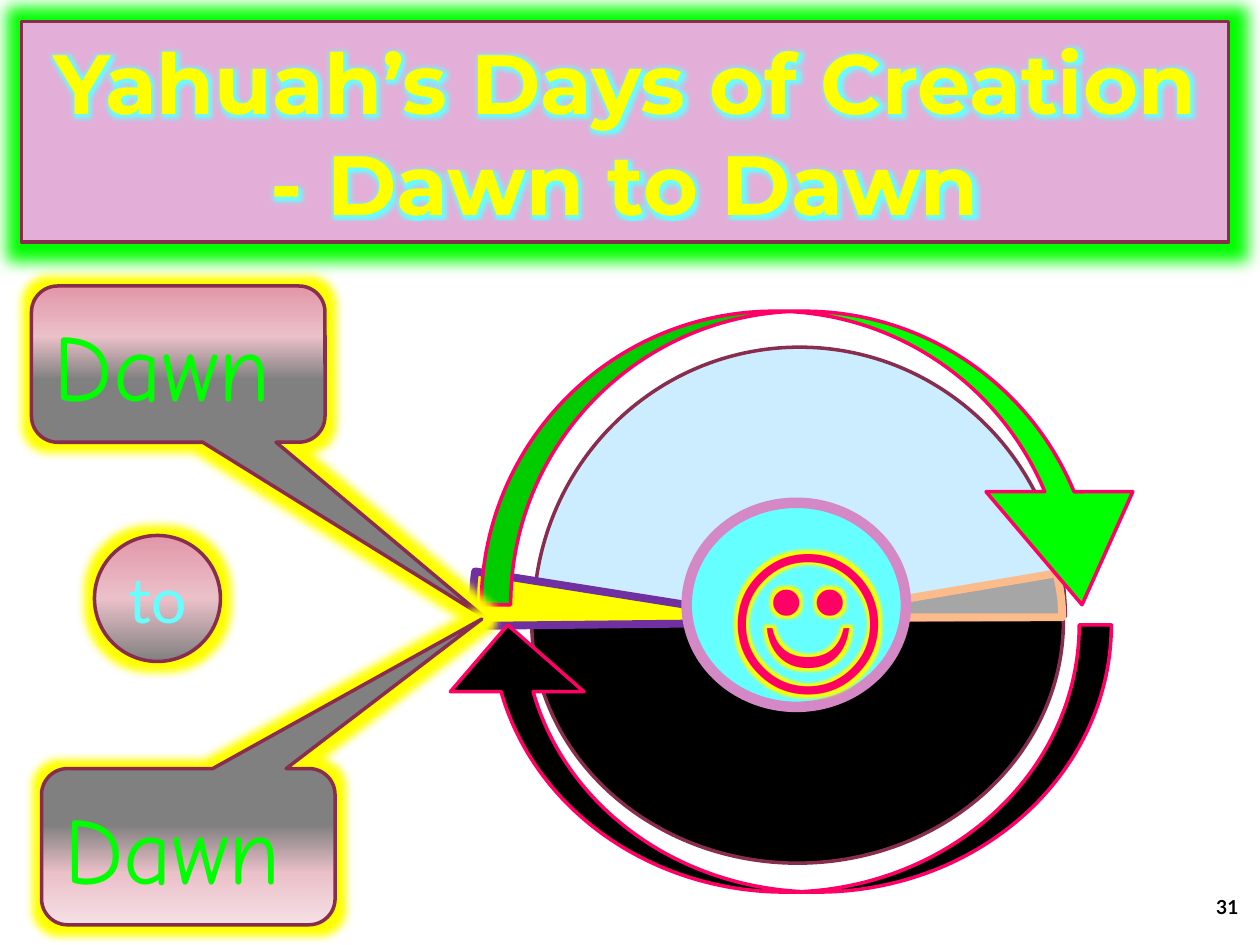
from typing import NamedTuple, Optional

from lxml.etree import SubElement
from pptx import Presentation
from pptx.dml.color import RGBColor
from pptx.enum.shapes import MSO_SHAPE
from pptx.enum.text import MSO_ANCHOR, MSO_AUTO_SIZE, PP_ALIGN
from pptx.oxml.ns import qn
from pptx.util import Inches, Pt

COLORS = {
    "maroon": "882D4D", "sky": "CCECFF", "black": "000000", "gray": "A6A6A6",
    "peach": "FCBB8B", "orchid": "E3AFD8", "yellow": "FFFF00", "purple": "7030A0",
    "green": "00FF00", "pink": "FF0066", "cyan": "66FFFF", "mauve": "D488C5",
    "rose": "E296A8", "blush": "EBC0C9", "dusk": "808080", "pale": "F5E0E5",
}


class Box(NamedTuple):
    left: float
    top: float
    width: float
    height: float


class Label(NamedTuple):
    text: str
    size: float
    font: str
    color: str
    bold: bool = False
    glow: Optional[str] = None
    align: PP_ALIGN = PP_ALIGN.CENTER


class Figure(NamedTuple):
    kind: MSO_SHAPE
    box: Box
    fill: str = ""
    line: str = "maroon"
    weight: float = 2
    adjustments: tuple = ()
    rotation: float = 0
    flip: bool = False
    gradient: tuple = ()
    glow: Optional[str] = None
    label: Optional[Label] = None


def rgb(name: str) -> RGBColor:
    return RGBColor.from_string(COLORS[name])


def place(shape, box: Box) -> None:
    shape.left, shape.top, shape.width, shape.height = map(Inches, box)


def add_glow(effects, color: str, points: float) -> None:
    glow = SubElement(effects, qn("a:glow"), rad=str(Pt(points)))
    SubElement(glow, qn("a:srgbClr"), val=COLORS[color])


def write(shape, label: Label, anchor: MSO_ANCHOR = MSO_ANCHOR.MIDDLE) -> None:
    frame = shape.text_frame
    frame.word_wrap = True
    frame.auto_size = MSO_AUTO_SIZE.NONE
    frame.vertical_anchor = anchor
    paragraph = frame.paragraphs[0]
    paragraph.alignment = label.align
    run = paragraph.add_run()
    run.text = label.text
    font = paragraph.font
    font.name, font.size, font.bold = label.font, Pt(label.size), label.bold
    font.color.rgb = rgb(label.color)
    if label.glow:
        properties = run._r.get_or_add_rPr()
        add_glow(SubElement(properties, qn("a:effectLst")), label.glow, 5)


def paint(shape, fill: str, line: str, weight: float, glow: Optional[str], radius: float) -> None:
    if fill:
        shape.fill.solid()
        shape.fill.fore_color.rgb = rgb(fill)
    shape.line.color.rgb = rgb(line)
    shape.line.width = Pt(weight)
    shape.shadow.inherit = False
    if glow:
        add_glow(shape._element.spPr.find(qn("a:effectLst")), glow, radius)


def shade(shape, stops: tuple) -> None:
    shape.fill.gradient()
    shape.fill.gradient_angle = 270
    stop_list = shape._element.spPr.find(".//" + qn("a:gsLst"))
    for stop in list(stop_list):
        stop_list.remove(stop)
    for percent, color in stops:
        stop = SubElement(stop_list, qn("a:gs"), pos=str(percent * 1000))
        SubElement(stop, qn("a:srgbClr"), val=COLORS[color])


def draw(shapes, figure: Figure) -> None:
    shape = shapes.add_shape(figure.kind, *map(Inches, figure.box))
    for index, value in enumerate(figure.adjustments):
        shape.adjustments[index] = value
    shape.rotation = figure.rotation
    if figure.flip:
        shape._element.spPr.find(qn("a:xfrm")).set("flipH", "1")
    if figure.gradient:
        shade(shape, figure.gradient)
    paint(shape, figure.fill, figure.line, figure.weight, figure.glow, 10)
    if figure.label:
        write(shape, figure.label)


DAWN = Label("Dawn ", 54, "Comic Neue", "green")

DAY_PARTS = [
    Figure(MSO_SHAPE.PIE, Box(4.2, 2.79, 4.29, 4.22), "sky",
           adjustments=(54, 161.84), rotation=90),
    Figure(MSO_SHAPE.PIE, Box(4.41, 2.82, 3.84, 4.22), "black",
           adjustments=(53.68, 162), rotation=270),
    Figure(MSO_SHAPE.PIE, Box(4.62, 2.79, 3.4, 4.22), "gray", "peach", 4.5,
           adjustments=(156.24, 162), rotation=90),
]

CYCLE = [
    Figure(MSO_SHAPE.PIE, Box(4.57, 2.35, 3.52, 5.18), "yellow", "purple", 4.5,
           adjustments=(156.24, 162), rotation=279),
    Figure(MSO_SHAPE.CURVED_DOWN_ARROW, Box(3.82, 2.47, 5.35, 2.33), "green", "pink",
           adjustments=(0.1, 0.5, 0.385)),
    Figure(MSO_SHAPE.CURVED_UP_ARROW, Box(3.5, 4.96, 5.32, 2.12), "black", "pink",
           adjustments=(0.12, 0.5, 0.25), flip=True),
    Figure(MSO_SHAPE.ROUNDED_RECTANGULAR_CALLOUT, Box(0.25, 2.27, 2.33, 1.24),
           adjustments=(1.04, 1.615, 0.167), glow="yellow", label=DAWN,
           gradient=((0, "rose"), (32, "blush"), (60, "dusk"))),
    Figure(MSO_SHAPE.OVAL, Box(0.75, 4.25, 1, 1), glow="yellow",
           label=Label("to", 36, "Lato", "cyan"),
           gradient=((0, "rose"), (50, "blush"), (100, "dusk"))),
    Figure(MSO_SHAPE.ROUNDED_RECTANGULAR_CALLOUT, Box(0.33, 6.1, 2.33, 1.24),
           adjustments=(1, -1.457, 0.167), glow="yellow", label=DAWN,
           gradient=((36, "dusk"), (67, "blush"), (100, "pale"))),
    Figure(MSO_SHAPE.OVAL, Box(5.45, 3.99, 1.74, 1.62), "cyan", "mauve", 6,
           label=Label("☺", 96, "Lato", "pink", glow="yellow")),
]


def main() -> None:
    presentation = Presentation()
    presentation.slide_width, presentation.slide_height = Inches(10), Inches(7.5)
    slide = presentation.slides.add_slide(presentation.slide_layouts[5])

    title = slide.shapes.title
    place(title, Box(0.17, 0.17, 9.58, 1.75))
    paint(title, "orchid", "maroon", 2, "green", 18)
    write(title, Label("Yahuah’s Days of Creation - Dawn to Dawn", 48, "Montserrat",
                       "yellow", bold=True, glow="cyan"))

    day = slide.shapes.add_group_shape()
    for part in DAY_PARTS:
        draw(day.shapes, part)
    for figure in CYCLE:
        draw(slide.shapes, figure)

    page_number = slide.shapes.add_textbox(*map(Inches, Box(9.19, 7.04, 0.64, 0.25)))
    frame = page_number.text_frame
    frame.margin_left = frame.margin_right = frame.margin_top = frame.margin_bottom = 0
    write(page_number, Label("31", 11, "Lato", "black", bold=True, align=PP_ALIGN.RIGHT),
          MSO_ANCHOR.BOTTOM)

    presentation.save("out.pptx")


if __name__ == "__main__":
    main()
